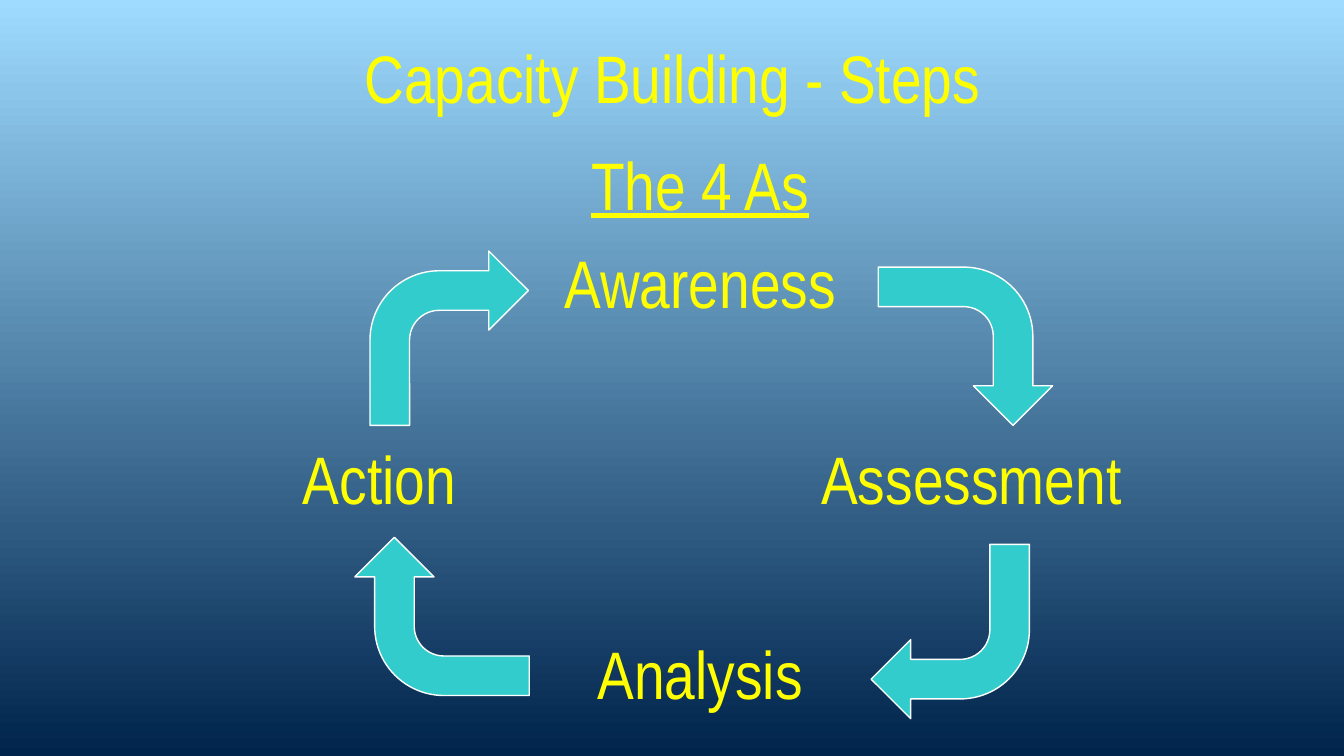
import pptx
import pptx.util
import pptx.dml.color
import pptx.enum.shapes
import pptx.enum.text

Inches, Pt = pptx.util.Inches, pptx.util.Pt
COLORS = {"sky": "9EDBFF", "navy": "00244C", "text": "FFFF00",
          "arrow": "33CCCC", "edge": "FFFFFF"}


def color(name):
    """Return the named colour."""
    return pptx.dml.color.RGBColor.from_string(COLORS[name])


def add_text(slide, text, box, size=48, under=False, fill="text"):
    """Add one centred line of text in the given box."""
    frame = slide.shapes.add_textbox(*map(Inches, box)).text_frame
    frame.word_wrap = True
    frame.vertical_anchor = pptx.enum.text.MSO_ANCHOR.MIDDLE
    frame.margin_top = frame.margin_bottom = 0
    para = frame.paragraphs[0]
    para.alignment = pptx.enum.text.PP_ALIGN.CENTER
    run = para.add_run()
    run.text = text
    run.font.name = "Arial Narrow"
    run.font.size = Pt(size)
    run.font.underline = under
    run.font.color.rgb = color(fill)


def add_arrow(slide, left, top, turn):
    """Add a bent arrow turned by the given angle."""
    kind = pptx.enum.shapes.MSO_SHAPE.BENT_ARROW
    arrow = slide.shapes.add_shape(
        kind, Inches(left), Inches(top), Inches(1.57), Inches(1.73))
    arrow.rotation = turn
    arrow.shadow.inherit = False
    arrow.fill.solid()
    arrow.fill.fore_color.rgb = color("arrow")
    arrow.line.color.rgb = color("edge")
    arrow.line.width = Pt(1)


def add_back(slide):
    """Fill the background from sky at the top to navy at the bottom."""
    fill = slide.background.fill
    fill.gradient()
    fill.gradient_angle = 270
    for stop, name in zip(fill.gradient_stops, ("sky", "navy")):
        stop.color.rgb = color(name)


def add_cycle(slide, left, top, width):
    """Add the heading, the four steps and the arrows that join them."""
    mid, row, high, wide = left + width / 2, 0.97, 0.77, 4
    steps = [("The 4 As", 0, 0), ("Awareness", 0, 1), ("Assessment", 2.69, 3),
             ("Analysis", 0, 5), ("Action", -3.18, 3)]
    for text, shift, line in steps:
        box = (mid + shift - wide / 2, top + 0.05 + line * row, wide, high)
        add_text(slide, text, box, under=line == 0)
    spots = [(1.33, 1.1), (6.45, 1.18), (6.3, 4.01), (1.26, 3.86)]
    for turn, (across, down) in enumerate(spots):
        add_arrow(slide, left + across, top + down, turn * 90)


def main():
    """Build the slide and save it."""
    deck = pptx.Presentation()
    deck.slide_width, deck.slide_height = Inches(13.33), Inches(7.5)
    slide = deck.slides.add_slide(deck.slide_layouts[6])
    add_back(slide)
    add_text(slide, "Capacity Building - Steps", (1.67, 0.38, 10, 0.77))
    add_cycle(slide, 2.34, 1.39, 9.21)
    deck.save("out.pptx")


if __name__ == "__main__":
    main()
